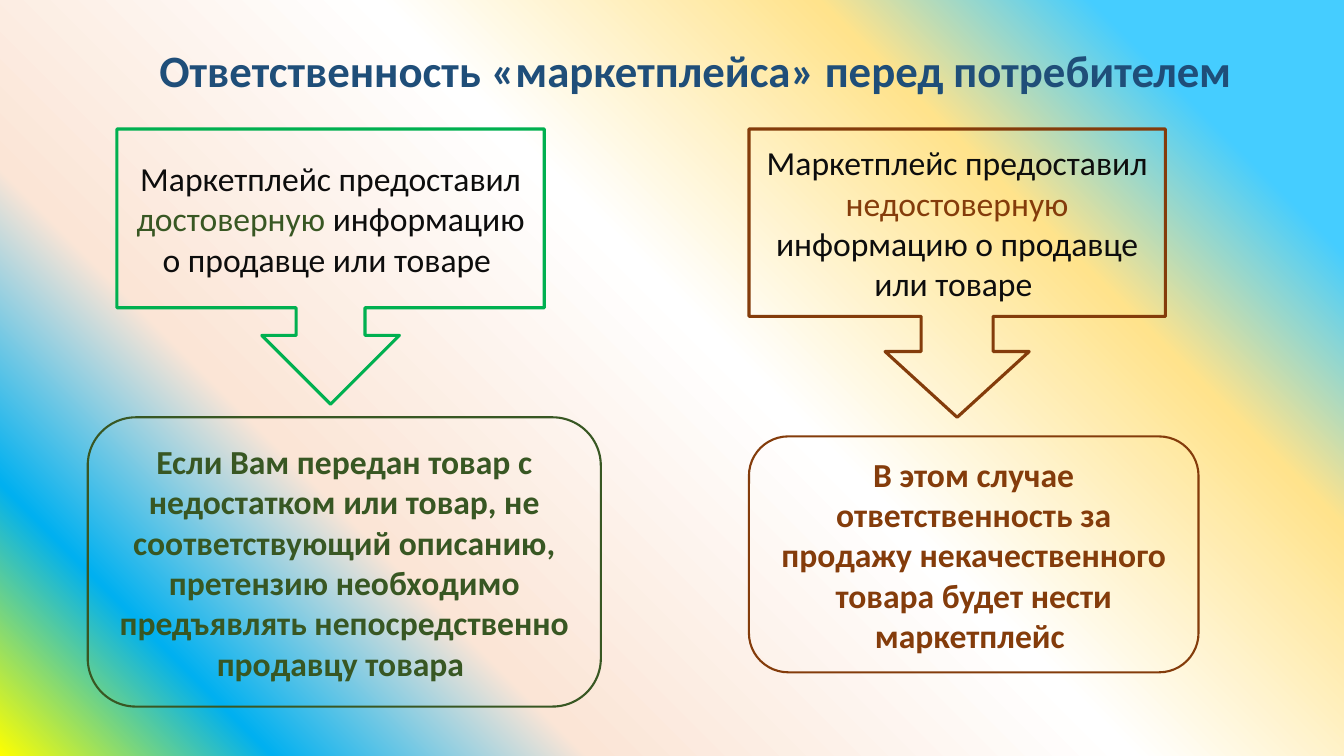
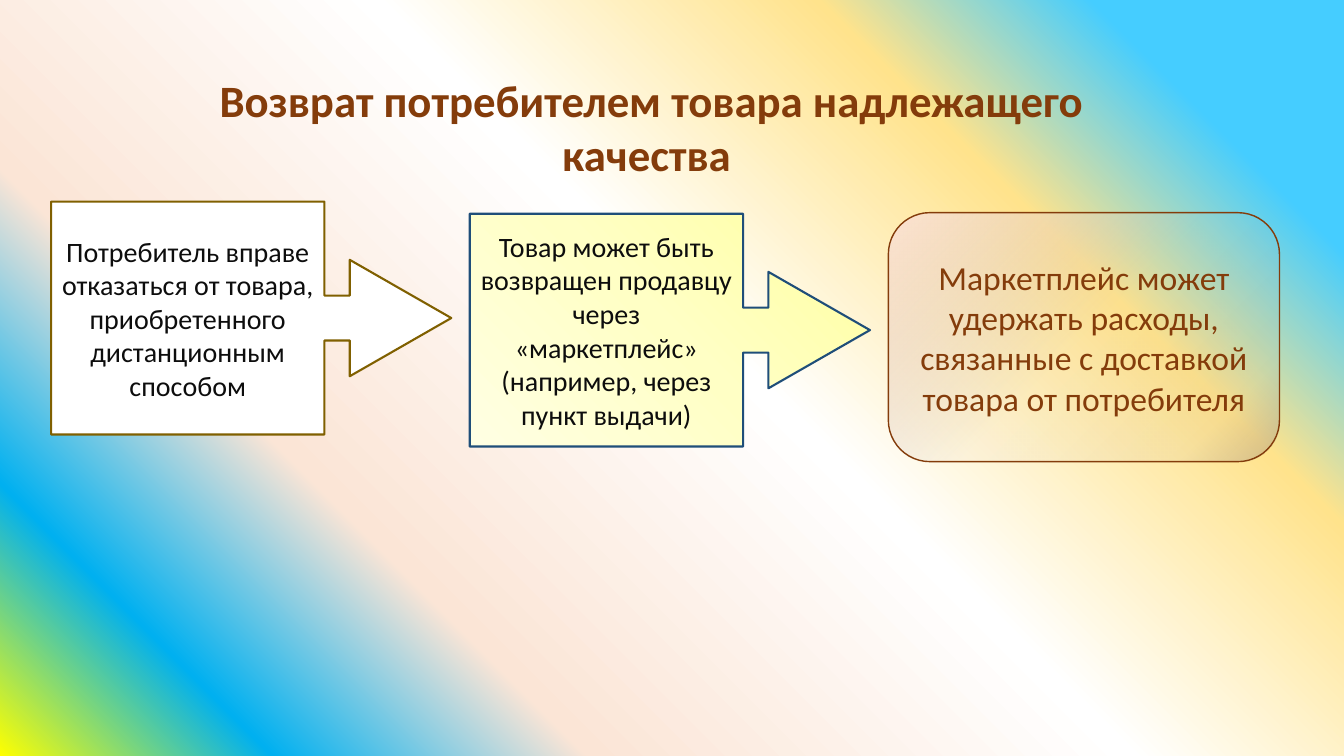
from lxml import etree
from pptx import Presentation
from pptx.dml.color import RGBColor
from pptx.enum.shapes import MSO_SHAPE
from pptx.enum.text import MSO_ANCHOR, MSO_AUTO_SIZE, PP_ALIGN
from pptx.oxml.ns import qn
from pptx.util import Inches, Pt

DOWN_CALLOUT = MSO_SHAPE.DOWN_ARROW_CALLOUT
RIGHT_CALLOUT = MSO_SHAPE.RIGHT_ARROW_CALLOUT
ROUNDED = MSO_SHAPE.ROUNDED_RECTANGLE
CENTER = PP_ALIGN.CENTER
TOP, MIDDLE = MSO_ANCHOR.TOP, MSO_ANCHOR.MIDDLE
NO_AUTOFIT = MSO_AUTO_SIZE.NONE
TITLE_ONLY = 5

NAVY, BROWN, FOREST, GREEN = "1F4E79", "843C0B", "385723", "00B050"
INK, OLIVE, WHITE = "0D0D0D", "806000", "FFFFFF"

BACKDROP = [(0, "FFFF00"), (13, "00B0F0"), (28, "FBE5D6"),
            (54, WHITE), (75, "FFE38C"), (88, "45CDFF")]
CREAM = [(0, "FFFFA0"), (50, "FFFFC5"), (100, "FFFFE3")]
SMOKE = [(0, "97877D", 45), (16, "A9978B", 9), (38, "C6B1A3", 7),
         (50, "D6C1B2", 7), (100, "FEE4D3")]


def color(hex_value):
    return RGBColor.from_string(hex_value)


def paint_gradient(fill, owner, stops, angle=None, focus=None):
    fill.gradient()
    gradient = next(owner.iter(qn("a:gradFill")))
    for child in list(gradient):
        gradient.remove(child)
    stop_list = etree.SubElement(gradient, qn("a:gsLst"))
    for position, hex_value, *opacity in stops:
        stop = etree.SubElement(stop_list, qn("a:gs"), pos=str(position * 1000))
        tone = etree.SubElement(stop, qn("a:srgbClr"), val=str(color(hex_value)))
        for share in opacity:
            etree.SubElement(tone, qn("a:alpha"), val=str(share * 1000))
    if focus:
        circle = etree.SubElement(gradient, qn("a:path"), path="circle")
        edges = {side: str(share * 1000) for side, share in zip("ltrb", focus)}
        etree.SubElement(circle, qn("a:fillToRect"), edges)
    else:
        etree.SubElement(gradient, qn("a:lin"), ang=str(angle * 60000), scaled="0")


class Deck:
    font = "Calibri"

    def __init__(self):
        self.presentation = Presentation()
        self.presentation.slide_width = Inches(13.333)
        self.presentation.slide_height = Inches(7.5)
        master = self.presentation.slide_master
        paint_gradient(master.background.fill, master.element, BACKDROP, angle=315)
        self.slide = None

    def box(self, left, top, width, height):
        across = self.presentation.slide_width / 100
        down = self.presentation.slide_height / 100
        return (round(left * across), round(top * down),
                round(width * across), round(height * down))

    def set_text(self, frame, parts, size, bold, anchor):
        layout = {"word_wrap": True, "auto_size": NO_AUTOFIT, "vertical_anchor": anchor}
        for name, value in layout.items():
            setattr(frame, name, value)
        paragraph = frame.paragraphs[0]
        paragraph.alignment = CENTER
        for words, ink in parts:
            run = paragraph.add_run()
            run.text = words
            style = {"name": self.font, "size": Pt(size), "bold": bold}
            for name, value in style.items():
                setattr(run.font, name, value)
            run.font.color.rgb = color(ink)

    def add_slide(self, heading, ink, place):
        layout = self.presentation.slide_layouts[TITLE_ONLY]
        self.slide = self.presentation.slides.add_slide(layout)
        title = self.slide.shapes.title
        for name, value in zip(("left", "top", "width", "height"), self.box(*place)):
            setattr(title, name, value)
        self.set_text(title.text_frame, [(heading, ink)], 32, True, TOP)

    def add_block(self, kind, place, parts, outline, weight, size=24, bold=False,
                  fill=None, focus=None, adjust=()):
        block = self.slide.shapes.add_shape(kind, *self.box(*place))
        block.shadow.inherit = False
        for index, value in enumerate(adjust):
            block.adjustments[index] = value
        if focus:
            paint_gradient(block.fill, block.element, fill, focus=focus)
        elif fill:
            block.fill.solid()
            block.fill.fore_color.rgb = color(fill)
        else:
            block.fill.background()
        block.line.color.rgb = color(outline)
        block.line.width = Pt(weight)
        self.set_text(block.text_frame, parts, size, bold, MIDDLE)

    def add_case(self, place, quality, accent, outline, adjust=()):
        parts = [("Маркетплейс предоставил ", INK), (quality, accent),
                 ("информацию о продавце или товаре ", INK)]
        self.add_block(DOWN_CALLOUT, place, parts, outline, 2.25, adjust=adjust)

    def add_outcome(self, place, words, ink):
        self.add_block(ROUNDED, place, [(words, ink)], ink, 1.5, bold=True)

    def add_step(self, place, words, outline, fill, focus=None):
        self.add_block(RIGHT_CALLOUT, place, [(words, INK)], outline, 1.5, size=20,
                       fill=fill, focus=focus, adjust=(0.193, 0.25, 0.436, 0.683))


def build_liability(deck):
    deck.add_slide("Ответственность «маркетплейса» перед потребителем ", NAVY,
                   (10.5, 4.93, 83.33, 13.87))
    case_top, right_column = 17.07, 55.73
    deck.add_case((8.7, case_top, 31.8, 36.4), "достоверную ", FOREST, GREEN)
    deck.add_outcome((6.53, 55.2, 38.18, 38.27),
                     "Если Вам передан товар с недостатком или товар, не "
                     "соответствующий описанию, претензию необходимо предъявлять "
                     "непосредственно продавцу товара ", FOREST)
    deck.add_case((right_column, case_top, 30.98, 38.13), "недостоверную ",
                  BROWN, BROWN, (0.25, 0.25, 0.228, 0.65))
    deck.add_outcome((right_column, 57.73, 33.45, 31.2),
                     "В этом случае ответственность за продажу некачественного "
                     "товара будет нести маркетплейс ", BROWN)


def build_return(deck):
    deck.add_slide("Возврат потребителем товара надлежащего качества ", BROWN,
                   (10.65, 8.93, 75.68, 15.73))
    refusal, handover, costs = (3.8 + 31.15 * index for index in range(3))
    step_size = (29.78, 30.8)
    deck.add_step((refusal, 26.67, *step_size),
                  "Потребитель вправе отказаться от товара, приобретенного "
                  "дистанционным способом", OLIVE, WHITE)
    deck.add_step((handover, 28.27, *step_size),
                  "Товар может быть возвращен продавцу через «маркетплейс» "
                  "(например, через пункт выдачи)", NAVY, CREAM, (100, 0, 0, 100))
    deck.add_block(ROUNDED, (costs, 28.13, 29.1, 32.93),
                   [("Маркетплейс может удержать расходы, связанные с доставкой "
                     "товара от потребителя", BROWN)],
                   BROWN, 1, fill=SMOKE, focus=(100, 100, 0, 0))


def main():
    deck = Deck()
    build_liability(deck)
    build_return(deck)
    deck.presentation.save("out.pptx")


if __name__ == "__main__":
    main()
